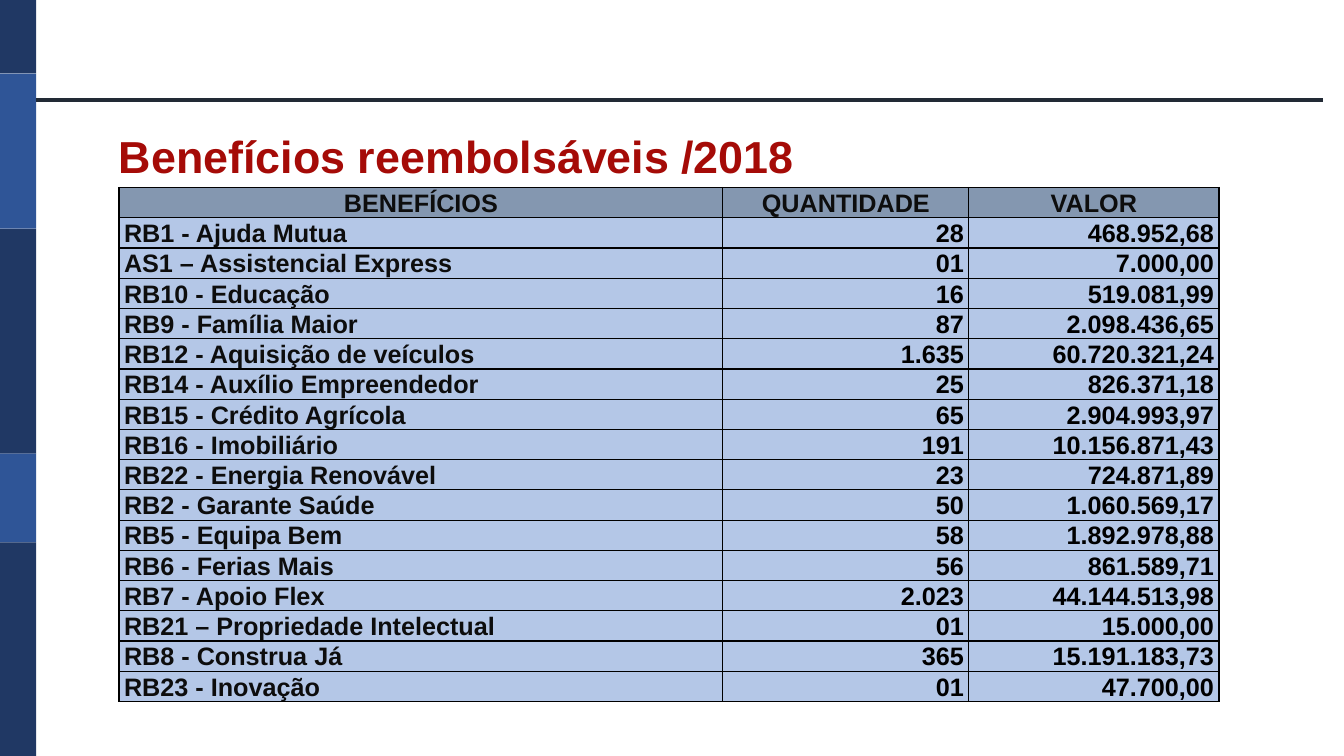
from pptx import Presentation
from pptx.dml.color import RGBColor
from pptx.enum.shapes import MSO_CONNECTOR, MSO_SHAPE
from pptx.enum.text import MSO_ANCHOR, PP_ALIGN
from pptx.oxml import parse_xml
from pptx.oxml.ns import nsdecls
from pptx.util import Inches, Pt
from lxml import etree

LEFT, CENTER, RIGHT = PP_ALIGN.LEFT, PP_ALIGN.CENTER, PP_ALIGN.RIGHT
TOP, BOTTOM = MSO_ANCHOR.TOP, MSO_ANCHOR.BOTTOM
RECT, STRAIGHT = MSO_SHAPE.RECTANGLE, MSO_CONNECTOR.STRAIGHT

# Content
TITLE = "Benefícios reembolsáveis /2018"
HEADER = ("BENEFÍCIOS", "QUANTIDADE", "VALOR")
BENEFITS = [
    ("RB1 - Ajuda Mutua", "28", "468.952,68"),
    ("AS1 – Assistencial Express", "01", "7.000,00"),
    ("RB10 - Educação", "16", "519.081,99"),
    ("RB9 - Família Maior", "87", "2.098.436,65"),
    ("RB12 - Aquisição de veículos", "1.635", "60.720.321,24"),
    ("RB14 - Auxílio Empreendedor", "25", "826.371,18"),
    ("RB15 - Crédito Agrícola", "65", "2.904.993,97"),
    ("RB16 - Imobiliário", "191", "10.156.871,43"),
    ("RB22 - Energia Renovável", "23", "724.871,89"),
    ("RB2 - Garante Saúde", "50", "1.060.569,17"),
    ("RB5 - Equipa Bem", "58", "1.892.978,88"),
    ("RB6 - Ferias Mais", "56", "861.589,71"),
    ("RB7 - Apoio Flex", "2.023", "44.144.513,98"),
    ("RB21 – Propriedade Intelectual", "01", "15.000,00"),
    ("RB8 - Construa Já", "365", "15.191.183,73"),
    ("RB23 - Inovação", "01", "47.700,00"),
]


class Theme:
    font = "Arial"
    title_size, table_size = 32, 18
    title, label, number = "A50B07", "0D0D0D", "000000"
    header_fill, body_fill, border = "8497B0", "B4C7E7", "000000"
    bands = ("203864", "2F5597")
    rule = "222A35"


# Geometry in inches
BAND_W = 0.36
BAND_EDGES = (0, 0.73, 2.27, 4.5, 5.38, 7.5)
RULE_Y, RULE_END = 0.99, 13.12
TABLE_X, TABLE_Y, ROW_H = 1.18, 1.86, 0.3
COL_W = (5.99, 2.44, 2.48)


def write(tf, text, size, color, align=LEFT):
    p = tf.paragraphs[0]
    p.alignment = align
    r = p.add_run()
    r.text = text
    r.font.name, r.font.size, r.font.bold = Theme.font, Pt(size), True
    r.font.color.rgb = RGBColor.from_string(color)


def add_borders(cell):
    tc_pr = cell._tc.get_or_add_tcPr()
    for i, side in enumerate(("lnL", "lnR", "lnT", "lnB")):
        tc_pr.insert(i, parse_xml(
            f'<a:{side} {nsdecls("a")} w="{Pt(1)}"><a:solidFill>'
            f'<a:srgbClr val="{Theme.border}"/></a:solidFill></a:{side}>'))


def fill_cell(cell, text, fill, color, align):
    cell.fill.solid()
    cell.fill.fore_color.rgb = RGBColor.from_string(fill)
    cell.margin_left = cell.margin_right = Inches(0.05)
    cell.margin_top = cell.margin_bottom = 0
    cell.vertical_anchor = BOTTOM
    write(cell.text_frame, text, Theme.table_size, color, align)
    add_borders(cell)


prs = Presentation()
prs.slide_width, prs.slide_height = Inches(13.33), Inches(7.5)
s = prs.slides.add_slide(prs.slide_layouts[5])

# Side bands, alternating dark and light
for i, (top, bottom) in enumerate(zip(BAND_EDGES, BAND_EDGES[1:])):
    sp = s.shapes.add_shape(RECT, 0, Inches(top), Inches(BAND_W), Inches(bottom - top))
    sp.shadow.inherit = False
    sp.fill.solid()
    sp.fill.fore_color.rgb = RGBColor.from_string(Theme.bands[i % 2])
    sp.line.fill.background()

# Rule under the empty top strip
rule = s.shapes.add_connector(STRAIGHT, Inches(BAND_W), Inches(RULE_Y),
                              Inches(RULE_END), Inches(RULE_Y))
rule.line.color.rgb = RGBColor.from_string(Theme.rule)
rule.line.width = Pt(3)
etree.SubElement(rule._element.spPr,
                 "{http://schemas.openxmlformats.org/drawingml/2006/main}effectLst")

# Title
title = s.shapes.title
title.left, title.top = Inches(1.08), Inches(1.23)
title.width, title.height = Inches(6.95), Inches(0.64)
tf = title.text_frame
tf.word_wrap = False
tf.vertical_anchor = TOP
write(tf, TITLE, Theme.title_size, Theme.title)

# Benefits table
rows = [HEADER] + BENEFITS
frame = s.shapes.add_table(len(rows), len(COL_W), Inches(TABLE_X), Inches(TABLE_Y),
                           Inches(sum(COL_W)), Inches(ROW_H * len(rows)))
table = frame.table
table.first_row = table.horz_banding = False
for column, width in zip(table.columns, COL_W):
    column.width = Inches(width)
for i, values in enumerate(rows):
    table.rows[i].height = Inches(ROW_H)
    for j, text in enumerate(values):
        if i == 0:
            look = (Theme.header_fill, Theme.label, CENTER)
        elif j == 0:
            look = (Theme.body_fill, Theme.label, LEFT)
        else:
            look = (Theme.body_fill, Theme.number, RIGHT)
        fill_cell(table.cell(i, j), text, *look)

prs.save("out.pptx")
